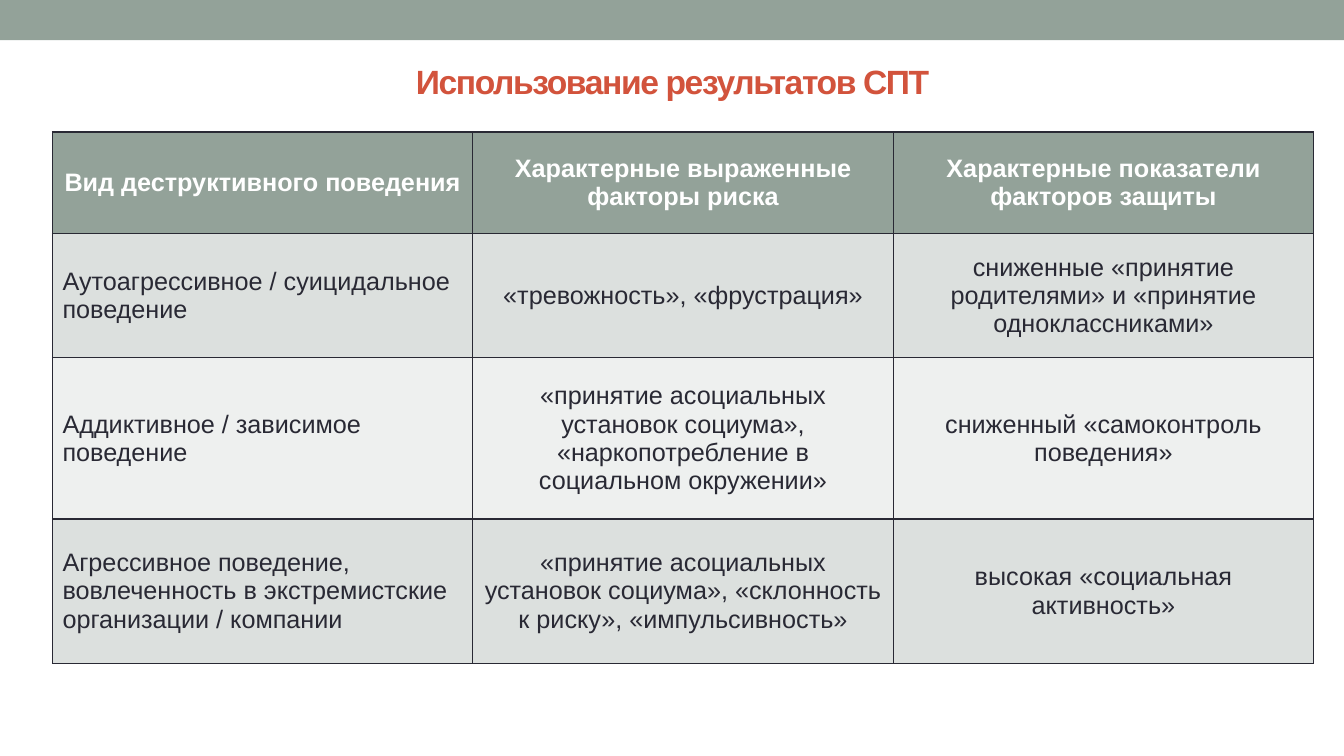
import dataclasses

import lxml.etree
import pptx
import pptx.dml.color
import pptx.enum.shapes
import pptx.enum.text
import pptx.oxml.ns
import pptx.util

Inches = pptx.util.Inches
Align = pptx.enum.text.PP_ALIGN
Anchor = pptx.enum.text.MSO_ANCHOR


@dataclasses.dataclass(frozen=True)
class Theme:
    font: str = "Arial"
    sage: str = "93A299"
    red: str = "D2533C"
    ink: str = "292934"
    white: str = "FFFFFF"
    bands: tuple = ("DCE0DE", "EEF0EF")
    title_size: int = 24
    table_size: int = 18
    border_width: int = 1


THEME = Theme()
TITLE = "Использование результатов СПТ"
COLUMN_WIDTH = 4.17
ROW_HEIGHTS = (1.01, 1.23, 1.6, 1.43)
ROWS = (
    (
        "Вид деструктивного поведения",
        "Характерные выраженные факторы риска",
        "Характерные показатели факторов защиты",
    ),
    (
        "Аутоагрессивное / суицидальное поведение",
        "«тревожность», «фрустрация»",
        "сниженные «принятие родителями» и «принятие одноклассниками»",
    ),
    (
        "Аддиктивное / зависимое поведение",
        "«принятие асоциальных установок социума», «наркопотребление в социальном окружении»",
        "сниженный «самоконтроль поведения»",
    ),
    (
        "Агрессивное поведение, вовлеченность в экстремистские организации / компании",
        "«принятие асоциальных установок социума», «склонность к риску», «импульсивность»",
        "высокая «социальная активность»",
    ),
)


def rgb(color):
    return pptx.dml.color.RGBColor.from_string(color)


def paint(item, color):
    item.fill.solid()
    item.fill.fore_color.rgb = rgb(color)


def write(frame, text, size, color, bold, align):
    frame.text = text
    para = frame.paragraphs[0]
    para.alignment = align
    span = para.runs[0]
    span.font.name = THEME.font
    span.font.size = pptx.util.Pt(size)
    span.font.bold = bold
    span.font.color.rgb = rgb(color)
    return span


def add_top_band(page):
    band = page.shapes.add_shape(
        pptx.enum.shapes.MSO_SHAPE.RECTANGLE, 0, 0, Inches(13.33), Inches(0.4)
    )
    band.shadow.inherit = False
    band.line.fill.background()
    paint(band, THEME.sage)


def add_title(page):
    box = page.shapes.add_textbox(Inches(2.17), Inches(0.26), Inches(9), Inches(1.08))
    frame = box.text_frame
    frame.word_wrap = True
    frame.vertical_anchor = Anchor.MIDDLE
    span = write(frame, TITLE, THEME.title_size, THEME.red, True, Align.CENTER)
    span.font._element.set("spc", "-100")


def add_borders(cell):
    properties = cell._tc.get_or_add_tcPr()
    qn = pptx.oxml.ns.qn
    for side in ("a:lnL", "a:lnR", "a:lnT", "a:lnB"):
        line = lxml.etree.SubElement(properties, qn(side))
        line.set("w", str(pptx.util.Pt(THEME.border_width)))
        fill = lxml.etree.SubElement(line, qn("a:solidFill"))
        lxml.etree.SubElement(fill, qn("a:srgbClr")).set("val", THEME.ink)


def fill_cell(cell, text, row, column):
    header = row == 0
    cell.vertical_anchor = Anchor.MIDDLE
    add_borders(cell)
    paint(cell, THEME.sage if header else THEME.bands[(row - 1) % 2])
    write(
        cell.text_frame,
        text,
        THEME.table_size,
        THEME.white if header else THEME.ink,
        header,
        Align.CENTER if header or column else Align.LEFT,
    )


def add_behaviour_table(page):
    columns = len(ROWS[0])
    table = page.shapes.add_table(
        len(ROWS), columns, Inches(0.52), Inches(1.31),
        Inches(COLUMN_WIDTH * columns), Inches(sum(ROW_HEIGHTS)),
    ).table
    for column in table.columns:
        column.width = Inches(COLUMN_WIDTH)
    for row, texts in enumerate(ROWS):
        table.rows[row].height = Inches(ROW_HEIGHTS[row])
        for column, text in enumerate(texts):
            fill_cell(table.cell(row, column), text, row, column)


def main():
    deck = pptx.Presentation()
    deck.slide_width = Inches(13.33)
    deck.slide_height = Inches(7.5)
    page = deck.slides.add_slide(deck.slide_layouts[6])
    add_top_band(page)
    add_title(page)
    add_behaviour_table(page)
    deck.save("out.pptx")


if __name__ == "__main__":
    main()
